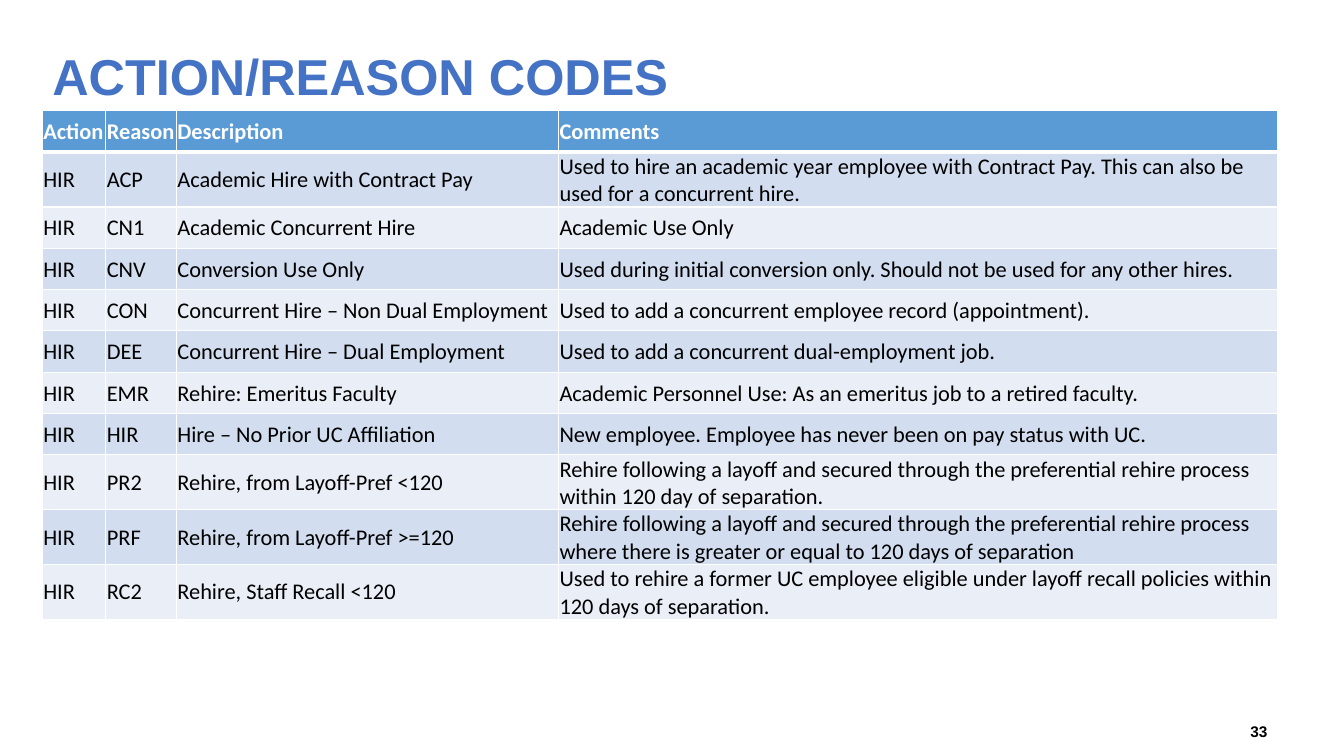
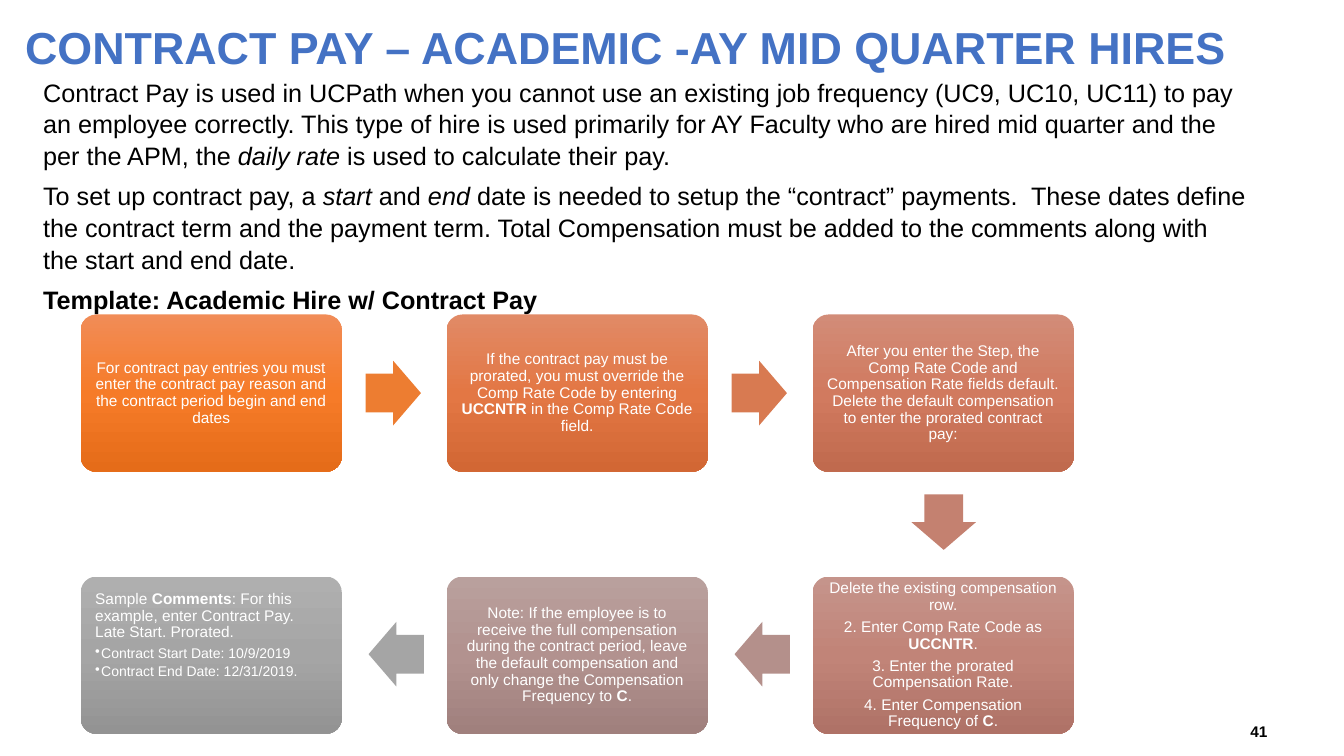
from copy import deepcopy

from lxml.etree import SubElement
from pptx import Presentation
from pptx.dml.color import RGBColor
from pptx.enum.shapes import MSO_SHAPE
from pptx.enum.text import MSO_ANCHOR, PP_ALIGN
from pptx.oxml.ns import qn
from pptx.util import Inches, Pt

COLOURS = {
    "title": "4472C4",
    "text": "000000",
    "white": "FFFFFF",
    "header": "5B9BD5",
    "band_dark": "D2DEEF",
    "band_light": "EAEFF7",
}


def add_runs(paragraph, runs, size, colour, font="Arial"):
    """Add (text, style) runs; style holds "b" for bold, "i" for italic."""
    for text, style in runs:
        run = paragraph.add_run()
        run.text = text
        run.font.name = font
        run.font.size = Pt(size)
        run.font.bold = "b" in style
        run.font.italic = "i" in style
        run.font.color.rgb = RGBColor.from_string(COLOURS[colour])


def add_text_frame(slide, left, top, width, height):
    box = slide.shapes.add_textbox(Inches(left), Inches(top), Inches(width), Inches(height))
    box.text_frame.word_wrap = True
    return box.text_frame


prs = Presentation()
prs.slide_width = Inches(13.33)
prs.slide_height = Inches(7.5)

# Titles and page numbers
pages = [
    ("ACTION/REASON CODES", 36, (0.42, 0.35, 11.99, 0.75), "33"),
    ("CONTRACT PAY – ACADEMIC -AY MID QUARTER HIRES", 32, (0.15, 0.1, 13.18, 0.95), "41"),
]
slides = []
for title, title_size, title_place, number in pages:
    slide = prs.slides.add_slide(prs.slide_layouts[6])
    title_frame = add_text_frame(slide, *title_place)
    title_frame.margin_top = Inches(0.1)
    add_runs(title_frame.paragraphs[0], [(title, "b")], title_size, "title")
    number_frame = add_text_frame(slide, 9.56, 7.09, 3.11, 0.33)
    number_frame.vertical_anchor = MSO_ANCHOR.MIDDLE
    number_frame.paragraphs[0].alignment = PP_ALIGN.RIGHT
    add_runs(number_frame.paragraphs[0], [(number, "b")], 11, "text")
    slides.append(slide)
codes_slide, contract_slide = slides

# Table of action and reason codes
codes = [
    ("Action", "Reason", "Description", "Comments"),
    ("HIR", "ACP", "Academic Hire with Contract Pay",
     "Used to hire an academic year employee with Contract Pay. "
     "This can also be used for a concurrent hire."),
    ("HIR", "CN1", "Academic Concurrent Hire", "Academic Use Only"),
    ("HIR", "CNV", "Conversion Use Only",
     "Used during initial conversion only. Should not be used for any other hires."),
    ("HIR", "CON", "Concurrent Hire – Non Dual Employment",
     "Used to add a concurrent employee record (appointment)."),
    ("HIR", "DEE", "Concurrent Hire – Dual Employment",
     "Used to add a concurrent dual-employment job."),
    ("HIR", "EMR", "Rehire: Emeritus Faculty",
     "Academic Personnel Use: As an emeritus job to a retired faculty."),
    ("HIR", "HIR", "Hire – No Prior UC Affiliation",
     "New employee. Employee has never been on pay status with UC."),
    ("HIR", "PR2", "Rehire, from Layoff-Pref <120",
     "Rehire following a layoff and secured through the preferential rehire process "
     "within 120 day of separation."),
    ("HIR", "PRF", "Rehire, from Layoff-Pref >=120",
     "Rehire following a layoff and secured through the preferential rehire process "
     "where there is greater or equal to 120 days of separation"),
    ("HIR", "RC2", "Rehire, Staff Recall <120",
     "Used to rehire a former UC employee eligible under layoff recall policies "
     "within 120 days of separation."),
]
column_widths = [0.63, 0.7, 3.79, 7.13]
row_height = 0.41
codes_table = codes_slide.shapes.add_table(
    len(codes), len(column_widths), Inches(0.42), Inches(1.1),
    Inches(sum(column_widths)), Inches(row_height * len(codes))).table
codes_table.horz_banding = False
for column, width in zip(codes_table.columns, column_widths):
    column.width = Inches(width)

for r, values in enumerate(codes):
    codes_table.rows[r].height = Inches(row_height)
    is_header = r == 0
    band = "header" if is_header else "band_dark" if r % 2 else "band_light"
    # The rule under the header is thicker than the others
    borders = {"a:lnL": 1, "a:lnR": 1, "a:lnT": 3 if r == 1 else 1, "a:lnB": 3 if is_header else 1}
    for c, value in enumerate(values):
        cell = codes_table.cell(r, c)
        cell.margin_left = cell.margin_right = cell.margin_top = Inches(0.01)
        cell.margin_bottom = 0
        cell.vertical_anchor = MSO_ANCHOR.MIDDLE
        cell_properties = cell._tc.get_or_add_tcPr()
        for side, points in borders.items():
            border = SubElement(cell_properties, qn(side), w=str(Pt(points)))
            SubElement(SubElement(border, qn("a:solidFill")), qn("a:srgbClr"), val=COLOURS["white"])
        cell.fill.solid()
        cell.fill.fore_color.rgb = RGBColor.from_string(COLOURS[band])
        add_runs(cell.text_frame.paragraphs[0], [(value, "b" if is_header else "")], 16,
                 "white" if is_header else "text", "Calibri")

# Introduction to contract pay
introduction = [
    [("Contract Pay is used in UCPath when you cannot use an existing job frequency "
      "(UC9, UC10, UC11) to pay an employee correctly. This type of hire is used primarily "
      "for AY Faculty who are hired mid quarter and the per the APM, the ", ""),
     ("daily rate ", "i"), ("is used to calculate their pay.", "")],
    [("To set up contract pay, a ", ""), ("start ", "i"), ("and ", ""), ("end", "i"),
     (" date is needed to setup the “contract” payments.  These dates define the contract "
      "term and the payment term. Total Compensation must be added to the comments along "
      "with the start and end date.", "")],
    [("Template: Academic Hire w/ Contract Pay", "b")],
]
introduction_frame = add_text_frame(contract_slide, 0.33, 0.7, 12.17, 2.41)
for i, runs in enumerate(introduction):
    paragraph = introduction_frame.add_paragraph() if i else introduction_frame.paragraphs[0]
    paragraph.line_spacing = 1.05
    paragraph.space_after = Pt(6)
    add_runs(paragraph, runs, 18, "text")

# Steps: column, row, gradient, paragraphs
steps = [
    (0, 0, ("F18C57", "F67B28", "E56C19"), [
        [("For contract pay entries you must enter the contract pay reason and the contract "
          "period begin and end dates", "")]]),
    (1, 0, ("E18A66", "E37744", "D26734"), [
        [("If the contract pay must be prorated, you must override the Comp Rate Code by "
          "entering ", ""), ("UCCNTR", "b"), (" in the Comp Rate Code field.", "")]]),
    (2, 0, ("D28C78", "D17A5F", "C06A4E"), [
        [("After you enter the Step, the Comp Rate Code and Compensation Rate fields default. "
          "Delete the default compensation to enter the prorated contract pay:", "")]]),
    (2, 1, ("C5948B", "C18478", "AF7267"), [
        [("Delete the existing compensation row.", "")],
        [("2. Enter Comp Rate Code as ", ""), ("UCCNTR", "b"), (".", "")],
        [("3. Enter the prorated Compensation Rate.", "")],
        [("4. Enter Compensation Frequency of ", ""), ("C", "b"), (".", "")]]),
    (1, 1, ("B9A09D", "B2928F", "A0807D"), [
        [("Note: If the employee is to receive the full compensation during the contract "
          "period, leave the default compensation and only change the Compensation "
          "Frequency to ", ""), ("C", "b"), (".", "")]]),
    (0, 1, ("AFAFAF", "A5A5A5", "939393"), [
        [("Sample ", ""), ("Comments", "b"),
         (": For this example, enter Contract Pay. Late Start. Prorated.", "")],
        [("Contract Start Date: 10/9/2019", "")],
        [("Contract End Date: 12/31/2019.", "")]]),
]
step_left, step_top, step_width, step_height = 0.8, 3.12, 2.59, 1.56
column_pitch, row_pitch = 3.63, 2.6
for column, row, gradient, paragraphs in steps:
    step = contract_slide.shapes.add_shape(
        MSO_SHAPE.ROUNDED_RECTANGLE,
        Inches(step_left + column * column_pitch), Inches(step_top + row * row_pitch),
        Inches(step_width), Inches(step_height))
    step.adjustments[0] = 0.1
    step.shadow.inherit = False
    step.line.fill.background()
    step.fill.gradient()
    step.fill.gradient_angle = 270
    stop_list = step._element.spPr.find(".//" + qn("a:gsLst"))
    stop_list.insert(1, deepcopy(stop_list[0]))
    for stop, position, colour in zip(step.fill.gradient_stops, (0, 0.5, 1), gradient):
        stop.position = position
        stop.color.rgb = RGBColor.from_string(colour)

    # The sample comments are left-aligned with bullets, the other steps centred
    is_sample = (column, row) == (0, 1)
    frame = step.text_frame
    frame.word_wrap = True
    frame.margin_left = frame.margin_right = frame.margin_top = frame.margin_bottom = Inches(0.1)
    frame.vertical_anchor = MSO_ANCHOR.TOP if is_sample else MSO_ANCHOR.MIDDLE
    for i, runs in enumerate(paragraphs):
        paragraph = frame.add_paragraph() if i else frame.paragraphs[0]
        is_bullet = is_sample and i > 0
        if is_bullet:
            properties = paragraph._p.get_or_add_pPr()
            properties.set("marL", str(Inches(0.06)))
            properties.set("indent", str(Inches(-0.06)))
            SubElement(properties, qn("a:buChar"), char="•")
        paragraph.alignment = PP_ALIGN.LEFT if is_sample else PP_ALIGN.CENTER
        paragraph.line_spacing = 0.9
        paragraph.space_after = Pt(1.5 if is_bullet else 4)
        add_runs(paragraph, runs, 10 if is_bullet else 11, "white")

# Arrows between the steps: centre x, centre y, rotation, colour
arrow_width, arrow_height = 0.55, 0.64
arrows = [
    (3.9, 3.9, 0, "ED7D31"),
    (7.53, 3.9, 0, "D87A51"),
    (9.36, 5.18, 90, "C48170"),
    (7.56, 6.49, 180, "B4908B"),
    (3.93, 6.49, 180, "A5A5A5"),
]
for centre_x, centre_y, rotation, colour in arrows:
    arrow = contract_slide.shapes.add_shape(
        MSO_SHAPE.RIGHT_ARROW,
        Inches(centre_x - arrow_width / 2), Inches(centre_y - arrow_height / 2),
        Inches(arrow_width), Inches(arrow_height))
    arrow.adjustments[0] = 0.6
    arrow.adjustments[1] = 0.5
    arrow.rotation = rotation
    arrow.shadow.inherit = False
    arrow.fill.solid()
    arrow.fill.fore_color.rgb = RGBColor.from_string(colour)
    arrow.line.fill.background()

prs.save("out.pptx")
